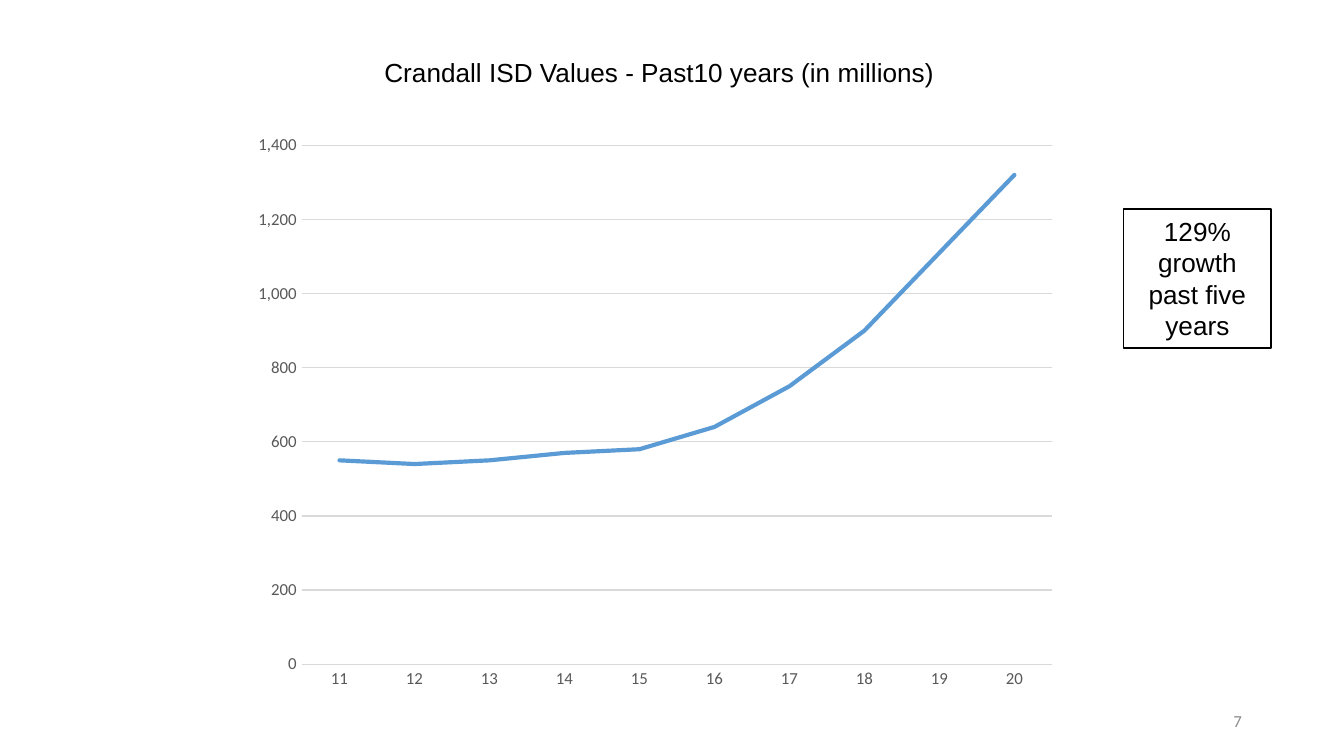
"""Build a slide with a line chart of ten years of district property values."""
from lxml import etree
from pptx import Presentation
from pptx.chart.data import CategoryChartData
from pptx.dml.color import RGBColor
from pptx.enum.chart import XL_CHART_TYPE, XL_MARKER_STYLE, XL_TICK_MARK
from pptx.enum.shapes import MSO_SHAPE
from pptx.enum.text import MSO_ANCHOR, MSO_AUTO_SIZE, PP_ALIGN
from pptx.oxml.ns import qn
from pptx.util import Inches, Pt

LINE_CHART = XL_CHART_TYPE.LINE
NO_MARKER = XL_MARKER_STYLE.NONE
NO_TICK = XL_TICK_MARK.NONE
RECTANGLE = MSO_SHAPE.RECTANGLE
TOP, MIDDLE = MSO_ANCHOR.TOP, MSO_ANCHOR.MIDDLE
LEFT, CENTER, RIGHT = PP_ALIGN.LEFT, PP_ALIGN.CENTER, PP_ALIGN.RIGHT
FIXED_SIZE = MSO_AUTO_SIZE.NONE

BLACK = RGBColor(0x00, 0x00, 0x00)
AXIS_GRAY = RGBColor(0x59, 0x59, 0x59)
NUMBER_GRAY = RGBColor(0x8C, 0x8C, 0x8C)
GRID_GRAY = RGBColor(0xD9, 0xD9, 0xD9)
BLUE = RGBColor(0x5B, 0x9B, 0xD5)

WIDTH = 10
HEIGHT = WIDTH * 9 / 16
TITLE_ONLY = 5
YEARS = [str(year) for year in range(11, 21)]
VALUES = [550, 540, 550, 570, 580, 640, 750, 900, 1110, 1320]

HEADING = {"name": "Arial", "size": Pt(14), "color": BLACK}
CHART_TEXT = {"name": "Calibri", "size": Pt(10), "color": BLACK}
AXIS_TEXT = {"name": "Calibri", "size": Pt(9), "color": AXIS_GRAY}
NUMBER_TEXT = {"name": "Calibri", "size": Pt(9), "color": NUMBER_GRAY}


def box(left, top, width, height):
    """Turn shares of the slide's size into lengths."""
    return [Inches(share * side) for share, side in
            zip((left, top, width, height), (WIDTH, HEIGHT, WIDTH, HEIGHT))]


def set_values(target, values):
    """Set attributes from a dict."""
    for name, value in values.items():
        setattr(target, name, value)


def format_font(font, style):
    """Apply a dict of font values."""
    for name, value in style.items():
        if name == "color":
            font.color.rgb = value
        else:
            setattr(font, name, value)


def format_line(line, color, width):
    """Set the colour and the width in points of a line."""
    line.color.rgb = color
    line.width = Pt(width)


def write_text(shape, text, style, alignment, anchor):
    """Write one formatted paragraph into a shape."""
    frame = shape.text_frame
    frame.text = text
    set_values(frame, {"word_wrap": True, "auto_size": FIXED_SIZE, "vertical_anchor": anchor})
    paragraph = frame.paragraphs[0]
    paragraph.alignment = alignment
    format_font(paragraph.runs[0].font, style)


def add_title(slide, text, position):
    """Move and fill the title placeholder."""
    title = slide.shapes.title
    set_values(title, dict(zip(("left", "top", "width", "height"), position)))
    write_text(title, text, HEADING, LEFT, TOP)


def add_callout(slide, text, position):
    """Add an outlined box with centred text."""
    shape = slide.shapes.add_shape(RECTANGLE, *position)
    shape.shadow.inherit = False
    shape.fill.background()
    format_line(shape.line, BLACK, 1)
    write_text(shape, text, HEADING, CENTER, TOP)


def add_slide_number(slide, number, position):
    """Add the page number in the lower right corner."""
    shape = slide.shapes.add_textbox(*position)
    write_text(shape, number, NUMBER_TEXT, RIGHT, MIDDLE)
    frame = shape.text_frame
    frame.margin_left = frame.margin_right = Inches(0.07)
    frame.margin_top = frame.margin_bottom = Inches(0.04)


def format_axes(chart):
    """Format the labels, lines, scale and grid of both axes."""
    years, values = chart.category_axis, chart.value_axis
    for axis in (years, values):
        axis.major_tick_mark = axis.minor_tick_mark = NO_TICK
        format_font(axis.tick_labels.font, AXIS_TEXT)
    format_line(years.format.line, GRID_GRAY, 0.75)
    values.format.line.fill.background()
    format_line(values.major_gridlines.format.line, GRID_GRAY, 0.75)
    set_values(values, {"minimum_scale": 0, "maximum_scale": 1400, "major_unit": 200})
    set_values(values.tick_labels, {"number_format": "#,##0", "number_format_is_linked": False})


def format_series(series):
    """Draw a series as a plain blue line with round ends and joins."""
    series.smooth = False
    series.marker.style = NO_MARKER
    format_line(series.format.line, BLUE, 2.25)
    outline = series.format.line.fill._xPr
    outline.set("cap", "rnd")
    etree.SubElement(outline, qn("a:round"))


def add_value_chart(slide, position):
    """Add the line chart of values by year."""
    data = CategoryChartData(number_format="#,##0")
    data.categories = YEARS
    data.add_series("Series 1", VALUES)
    chart = slide.shapes.add_chart(LINE_CHART, *position, data).chart
    set_values(chart, {"has_legend": False, "has_title": False})
    format_font(chart.font, CHART_TEXT)
    format_axes(chart)
    plot = chart.plots[0]
    plot.vary_by_categories = False
    format_series(plot.series[0])


def main():
    """Build and save the slide."""
    presentation = Presentation()
    presentation.slide_width = Inches(WIDTH)
    presentation.slide_height = Inches(HEIGHT)
    slide = presentation.slides.add_slide(presentation.slide_layouts[TITLE_ONLY])
    add_slide_number(slide, "7", box(0.706, 0.927, 0.225, 0.053))
    add_value_chart(slide, box(0.18, 0.164, 0.615, 0.763))
    add_title(slide, "Crandall ISD Values - Past10 years (in millions)",
              box(0.276, 0.066, 0.442, 0.06))
    add_callout(slide, "129% growth past five years", box(0.836, 0.276, 0.11, 0.185))
    presentation.save("out.pptx")


if __name__ == "__main__":
    main()
